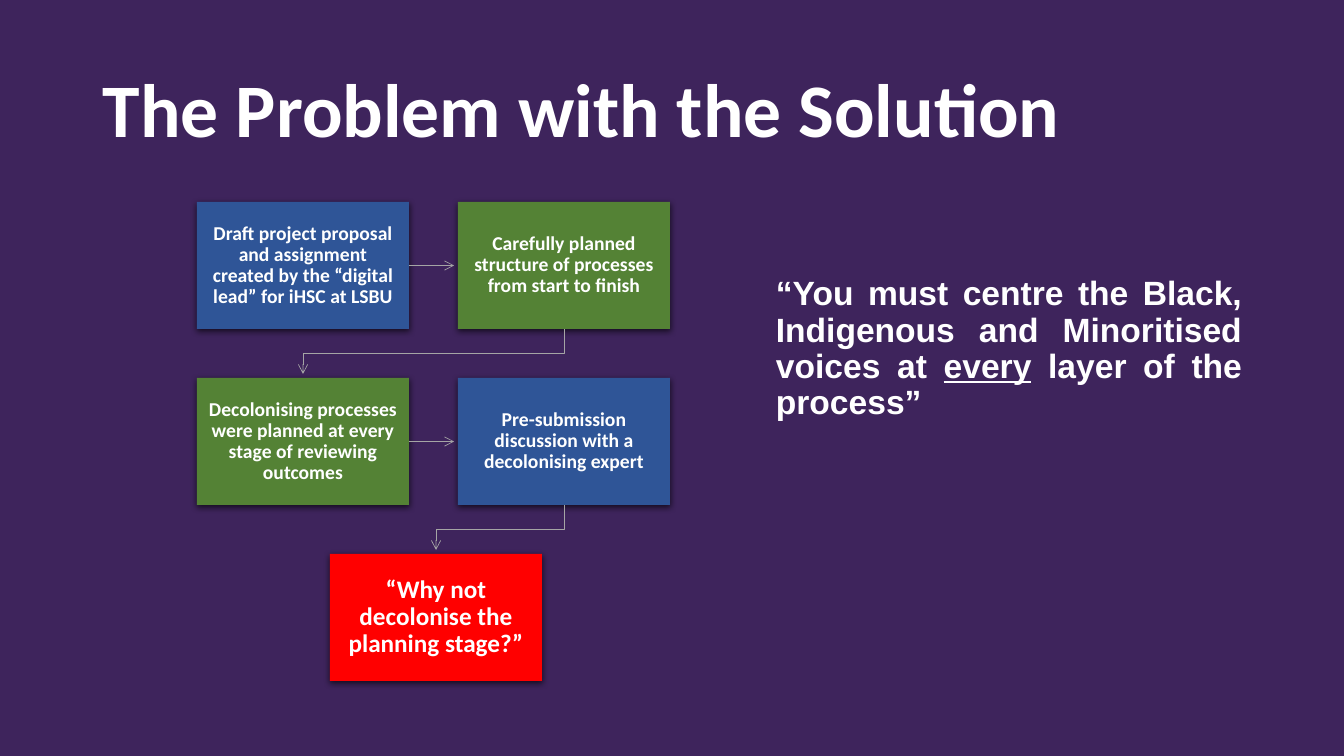
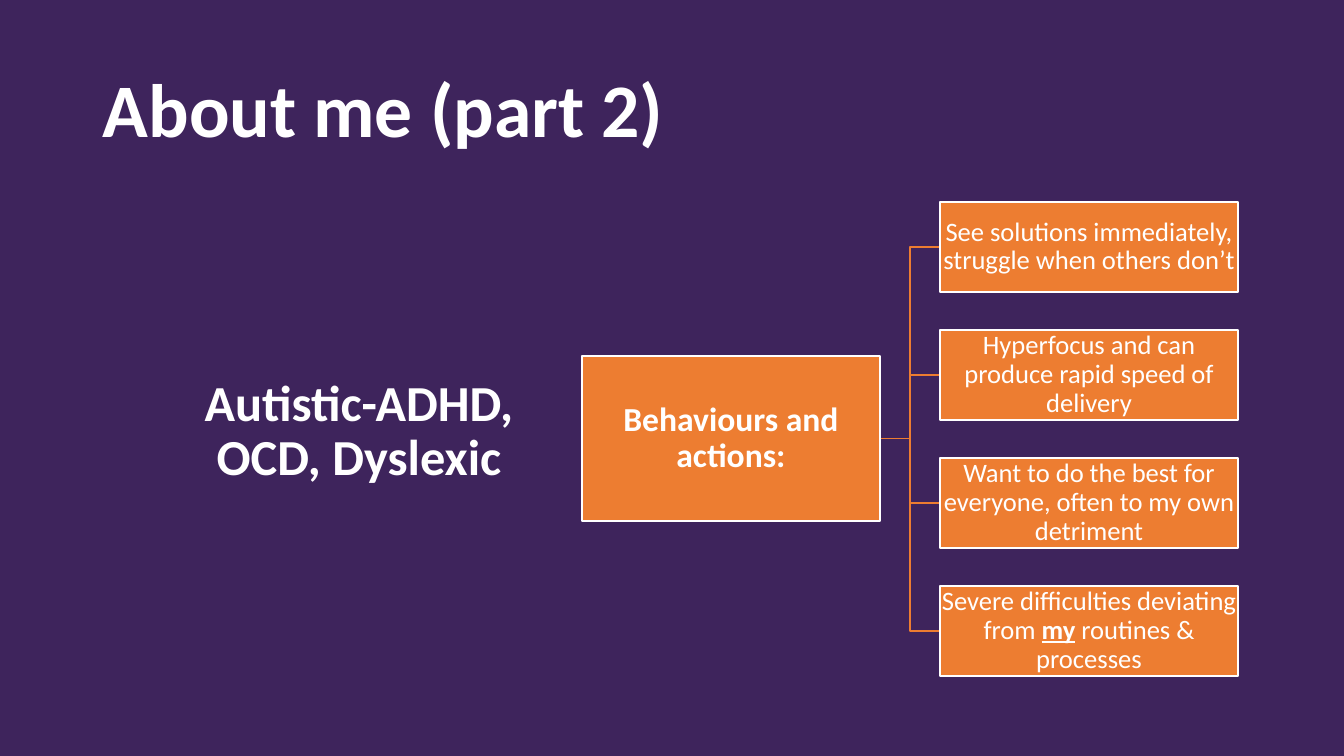
from itertools import pairwise
from lxml import etree
from pptx import Presentation
from pptx.dml.color import RGBColor
from pptx.enum.shapes import MSO_CONNECTOR as Link, MSO_SHAPE as Shape
from pptx.enum.text import MSO_ANCHOR as Anchor, PP_ALIGN as Align
from pptx.oxml.ns import qn
from pptx.util import Pt

# Content: text between underscores is underlined
TITLES = ["The Problem with the Solution", "About me (part 2)"]
QUOTE = "“You must centre the Black, Indigenous and Minoritised voices at _every_ layer of the process”"
STEPS = [  # left, row, fill, size, text
    (197, 0, "blue", 14, "Draft project proposal and assignment created by the “digital lead” for iHSC at LSBU"),
    (458, 0, "green", 14, "Carefully planned structure of processes from start to finish"),
    (197, 1, "green", 14, "Decolonising processes were planned at every stage of reviewing outcomes"),
    (458, 1, "blue", 14, "Pre-submission discussion with a decolonising expert"),
    (330, 2, "red", 18, "“Why not decolonise the planning stage?”"),
]
TRAITS = "Autistic-ADHD, OCD, Dyslexic"
HUB = "Behaviours and actions:"
LEAVES = [
    "See solutions immediately, struggle when others don’t",
    "Hyperfocus and can produce rapid speed of delivery",
    "Want to do the best for everyone, often to my own detriment",
    "Severe difficulties deviating from _my_ routines & processes",
]

# Shared style
HUES = {"back": "3E245C", "white": "FFFFFF", "blue": "2F5597", "green": "548235",
        "red": "FF0000", "grey": "A5A5A5", "orange": "ED7D31", "black": "000000"}
WIDE, HIGH = 1344, 756
UNIT = 12192000 / WIDE
TOP = 202


def px(n):
    return round(n * UNIT)


def hue(name):
    return RGBColor.from_string(HUES[name])


def write(shape, text, size, align, font="Calibri", bold=True, mark=True, inset=None, anchor=Anchor.MIDDLE):
    """Fill a shape with one paragraph; mark sets whether underlined words are bold."""
    frame = shape.text_frame
    frame.word_wrap = True
    frame.vertical_anchor = anchor
    if inset:
        frame.margin_left = frame.margin_right = px(inset[0])
        frame.margin_top = frame.margin_bottom = px(inset[1])
    para = frame.paragraphs[0]
    para.alignment = align
    para.line_spacing = 0.9
    for i, part in enumerate(text.split("_")):
        run = para.add_run()
        run.text = part
        face = run.font
        face.name, face.size = font, Pt(size)
        face.color.rgb = hue("white")
        face.underline = i % 2 == 1
        face.bold = mark if i % 2 else bold


def label(slide, at, *args, **style):
    write(slide.shapes.add_textbox(*map(px, at)), *args, **style)


def block(slide, at, fill, edge=None):
    box = slide.shapes.add_shape(Shape.RECTANGLE, *map(px, at))
    box.shadow.inherit = False
    box.fill.solid()
    box.fill.fore_color.rgb = hue(fill)
    if edge:
        box.line.color.rgb = hue(edge)
        box.line.width = Pt(1)
    else:
        box.line.fill.background()
    return box


def shade(box):
    effects = box._element.spPr.find(qn("a:effectLst"))
    drop = etree.SubElement(effects, qn("a:outerShdw"), blurRad="57150", dist="19050",
                            dir="5400000", algn="ctr", rotWithShape="0")
    tint = etree.SubElement(drop, qn("a:srgbClr"), val=HUES["black"])
    etree.SubElement(tint, qn("a:alpha"), val="63000")


def stroke(line, tone, width, head=False):
    line.line.color.rgb = hue(tone)
    line.line.width = Pt(width)
    props = line._element.spPr
    if head:
        etree.SubElement(props.find(qn("a:ln")), qn("a:tailEnd"), type="arrow")
    if props.find(qn("a:effectLst")) is None:
        etree.SubElement(props, qn("a:effectLst"))


def bend(slide, points, *style):
    first, *rest = [(px(x), px(y)) for x, y in points]
    pen = slide.shapes.build_freeform(*first)
    pen.add_line_segments(rest, close=False)
    line = pen.convert_to_shape()
    line.fill.background()
    stroke(line, *style)


def start(deck, title):
    slide = deck.slides.add_slide(deck.slide_layouts[6])
    slide.background.fill.solid()
    slide.background.fill.fore_color.rgb = hue("back")
    label(slide, (93, 40, 1159, 146), title, 54, Align.LEFT)
    return slide


def flow(slide):
    label(slide, (766, 272, 486, 409), QUOTE, 24, Align.JUSTIFY, font="Arial", anchor=Anchor.TOP)
    wide, high, pitch, gap = 212, 127, 176, 4
    nodes = []
    for left, row, fill, size, text in STEPS:
        top = TOP + row * pitch
        box = block(slide, (left, top, wide, high), fill)
        shade(box)
        write(box, text, size, Align.CENTER, inset=(10, 11))
        nodes.append((box, left, top))
    # Arrows: straight within a row, bent to the next row
    for (box, x, y), (_, left, top) in pairwise(nodes):
        if y == top:
            mid = px(y + high / 2)
            line = slide.shapes.add_connector(Link.STRAIGHT, px(x + wide), mid, px(left - gap), mid)
            line.begin_connect(box, 3)
            stroke(line, "grey", 0.5, True)
        else:
            a, b, mid = x + wide / 2, left + wide / 2, (y + high + top) / 2
            bend(slide, [(a, y + high), (a, mid), (b, mid), (b, top - gap)], "grey", 0.5, True)


def tree(slide):
    label(slide, (170, 373, 378, 136), TRAITS, 36, Align.CENTER, anchor=Anchor.TOP)
    wide, high, pitch = 298, 90, 128
    hub, top, tall, left = 582, 356, 165, 940
    root, mid = hub + wide, top + tall / 2
    bus = (root + left) / 2
    for i, text in enumerate(LEAVES):
        y = TOP + i * pitch
        axis = y + high / 2
        bend(slide, [(root, mid), (bus, mid), (bus, axis), (left, axis)], "orange", 1)
        leaf = block(slide, (left, y, wide, high), "orange", "white")
        write(leaf, text, 19, Align.CENTER, bold=False, inset=(1, 1))
    box = block(slide, (hub, top, wide, tall), "orange", "white")
    write(box, HUB, 24, Align.CENTER, inset=(2, 2))


def main():
    deck = Presentation()
    deck.slide_width, deck.slide_height = px(WIDE), px(HIGH)
    for title, draw in zip(TITLES, (flow, tree)):
        draw(start(deck, title))
    deck.save("out.pptx")


if __name__ == "__main__":
    main()
